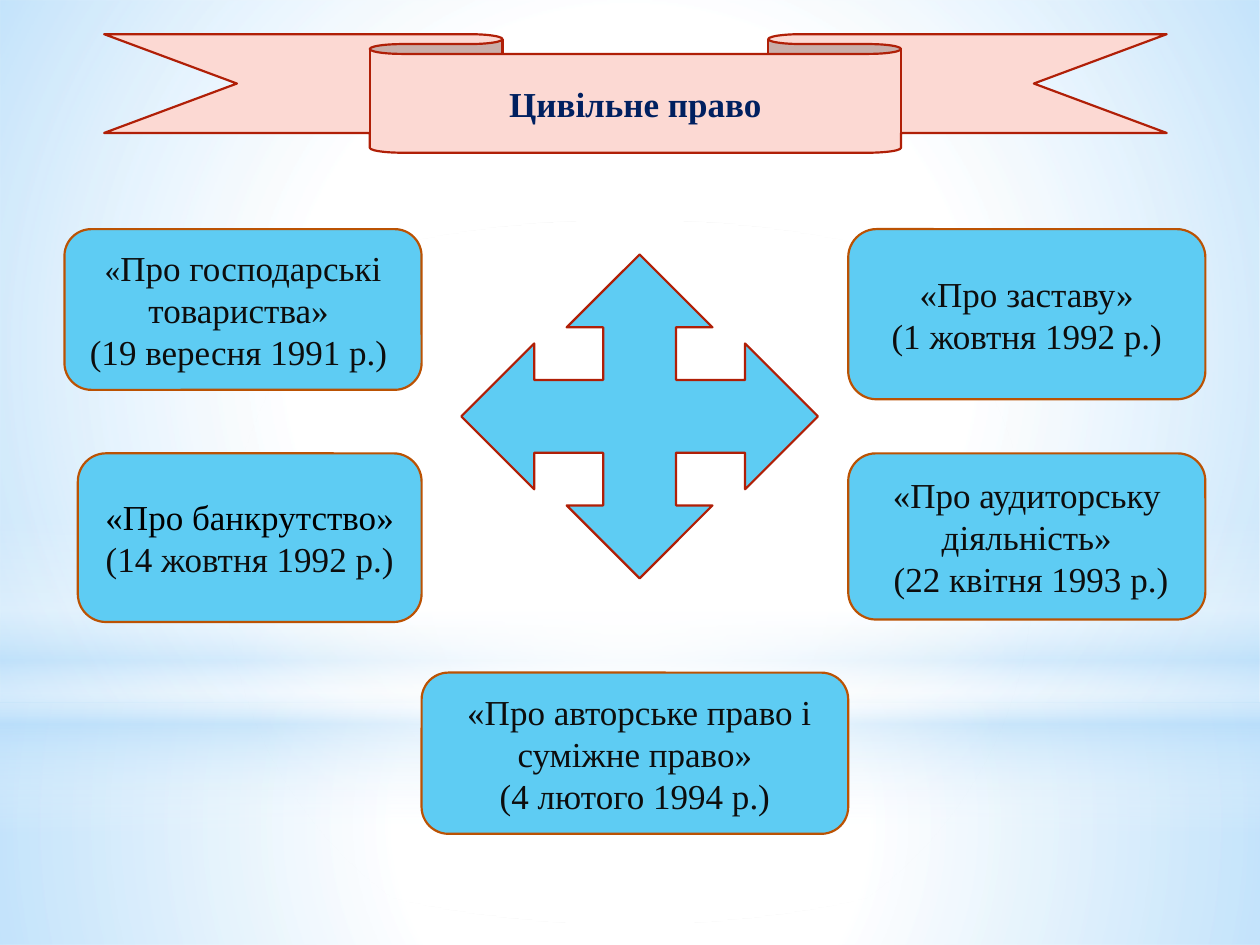
from lxml import etree
from pptx import Presentation
from pptx.dml.color import RGBColor
from pptx.enum.shapes import MSO_SHAPE
from pptx.enum.text import MSO_ANCHOR, PP_ALIGN
from pptx.oxml.ns import qn
from pptx.util import Cm, Pt

RECTANGLE, ELLIPSE = MSO_SHAPE.RECTANGLE, MSO_SHAPE.OVAL
ROUNDED, RIBBON, CROSS = MSO_SHAPE.ROUNDED_RECTANGLE, MSO_SHAPE.DOWN_RIBBON, MSO_SHAPE.QUAD_ARROW
MIDDLE, CENTER = MSO_ANCHOR.MIDDLE, PP_ALIGN.CENTER
SKY, RUST, RED, PINK = "5ECCF3", "BB5203", "B01F07", "FCD9D3"
INK, BLACK, NAVY = "0D0D0D", "000000", "002060"
WHITE, PALE = "FFFFFF", "B4DCFA"
SLIDE_WIDTH, SLIDE_HEIGHT = 25.4, 19.05


def color(value):
    """Turn a hex string into a colour."""
    return RGBColor.from_string(value)


def add_part(slide, kind, box, fill=None, line=None):
    """Add a preset shape in a box given in centimetres."""
    part = slide.shapes.add_shape(kind, *(Cm(length) for length in box))
    part.shadow.inherit = False
    if fill:
        part.fill.solid()
        part.fill.fore_color.rgb = color(fill)
    else:
        part.fill.background()
    if line:
        part.line.color.rgb = color(line)
        part.line.width = Pt(1.25)
    else:
        part.line.fill.background()
    return part


def add_glow(slide, kind, box, stops, radial=True):
    """Add a borderless shape with a translucent gradient."""
    glow = add_part(slide, kind, box)
    gradient = etree.Element(qn("a:gradFill"), rotWithShape="1")
    stop_list = etree.SubElement(gradient, qn("a:gsLst"))
    for position, tint, opacity in stops:
        stop = etree.SubElement(stop_list, qn("a:gs"), pos=str(position * 1000))
        shade = etree.SubElement(stop, qn("a:srgbClr"), val=tint)
        etree.SubElement(shade, qn("a:alpha"), val=str(opacity * 1000))
    if radial:
        focus = etree.SubElement(gradient, qn("a:path"), path="circle")
        etree.SubElement(focus, qn("a:fillToRect"), l="50000", t="50000", r="50000", b="50000")
    else:
        etree.SubElement(gradient, qn("a:lin"), ang="5400000", scaled="0")
    properties = glow.element.spPr
    properties.replace(properties.find(qn("a:noFill")), gradient)


def write(paragraph, text, size=20, ink=INK, bold=False):
    """Add a formatted run to a centred paragraph."""
    paragraph.alignment = CENTER
    run = paragraph.add_run()
    run.text = text
    run.font.name = "Times New Roman"
    run.font.size = Pt(size)
    run.font.bold = bold
    run.font.color.rgb = color(ink)


def fill_text(part, paragraphs):
    """Write paragraphs, each a list of (text, format) runs."""
    frame = part.text_frame
    frame.word_wrap = True
    frame.vertical_anchor = MIDDLE
    for index, runs in enumerate(paragraphs):
        paragraph = frame.add_paragraph() if index else frame.paragraphs[0]
        for text, style in runs:
            write(paragraph, text, **style)


def draw_backdrop(slide, box):
    """Paint the pale blue light and the horizon band."""
    left, top, width, height = box
    horizon = 14.17
    add_glow(slide, RECTANGLE, (left, top + horizon, width, height - horizon),
             [(0, WHITE, 91), (37, WHITE, 76), (100, PALE, 79)])
    add_glow(slide, RECTANGLE, (left, top, width, horizon),
             [(0, WHITE, 89), (48, WHITE, 62), (100, PALE, 79)])
    add_glow(slide, RECTANGLE, (left, top + 10.46, width, 6.35),
             [(0, WHITE, 0), (29, WHITE, 30), (45, PALE, 40),
              (55, WHITE, 26), (65, PALE, 60), (100, WHITE, 0)], radial=False)
    add_glow(slide, ELLIPSE, (left, top + 4.45, width, horizon),
             [(0, WHITE, 100), (56, WHITE, 0)])


def draw_laws(slide, box):
    """Place two columns of laws and one law below, between them."""
    left, top, width, _ = box
    column = 7.2
    inner_left, inner_right = left + column, left + width - column
    middle, bottom = top + 4.52, top + 8.94
    laws = [
        ((left, top, column, 3.24),
         [[("«", {"size": 18}), ("Про господарські товариства» ", {})],
          [("(19 вересня 1991 р.) ", {})]]),
        ((left + 0.27, middle, column - 0.27, 3.4),
         [[("«Про банкрутство» ", {"ink": BLACK}), ("(14 жовтня 1992 p.)", {})]]),
        ((inner_right, top, column, 3.43),
         [[("«Про заставу»", {})], [("(1 жовтня 1992 р.)", {})]]),
        ((inner_left, bottom, inner_right - inner_left, 3.25),
         [[(" ", {"ink": WHITE}), ("«Про авторське право і суміжне право»", {})],
          [("(4 лютого 1994 р.)", {})]]),
        ((inner_right, middle, column, 3.35),
         [[("«Про аудиторську діяльність»", {})], [(" (22 квітня 1993 p.)", {})]]),
    ]
    for place, paragraphs in laws:
        fill_text(add_part(slide, ROUNDED, place, SKY, RUST), paragraphs)


def draw_title(slide, box):
    """Place the title ribbon."""
    ribbon = add_part(slide, RIBBON, box, PINK, RED)
    fill_text(ribbon, [[("Цивільне право", {"ink": NAVY, "bold": True})]])


def draw_arrows(slide, box):
    """Place the four-way arrow."""
    add_part(slide, CROSS, box, SKY, RED)


def main():
    """Build and save the slide."""
    deck = Presentation()
    deck.slide_width, deck.slide_height = Cm(SLIDE_WIDTH), Cm(SLIDE_HEIGHT)
    slide = deck.slides.add_slide(deck.slide_layouts[6])
    slide.background.fill.solid()
    slide.background.fill.fore_color.rgb = color(WHITE)
    draw_backdrop(slide, (0, 0, SLIDE_WIDTH, SLIDE_HEIGHT))
    draw_laws(slide, (1.3, 4.62, 23, 12.19))
    draw_title(slide, (2.1, 0.69, 21.42, 2.39))
    draw_arrows(slide, (9.3, 5.13, 7.19, 6.53))
    deck.save("out.pptx")


if __name__ == "__main__":
    main()
